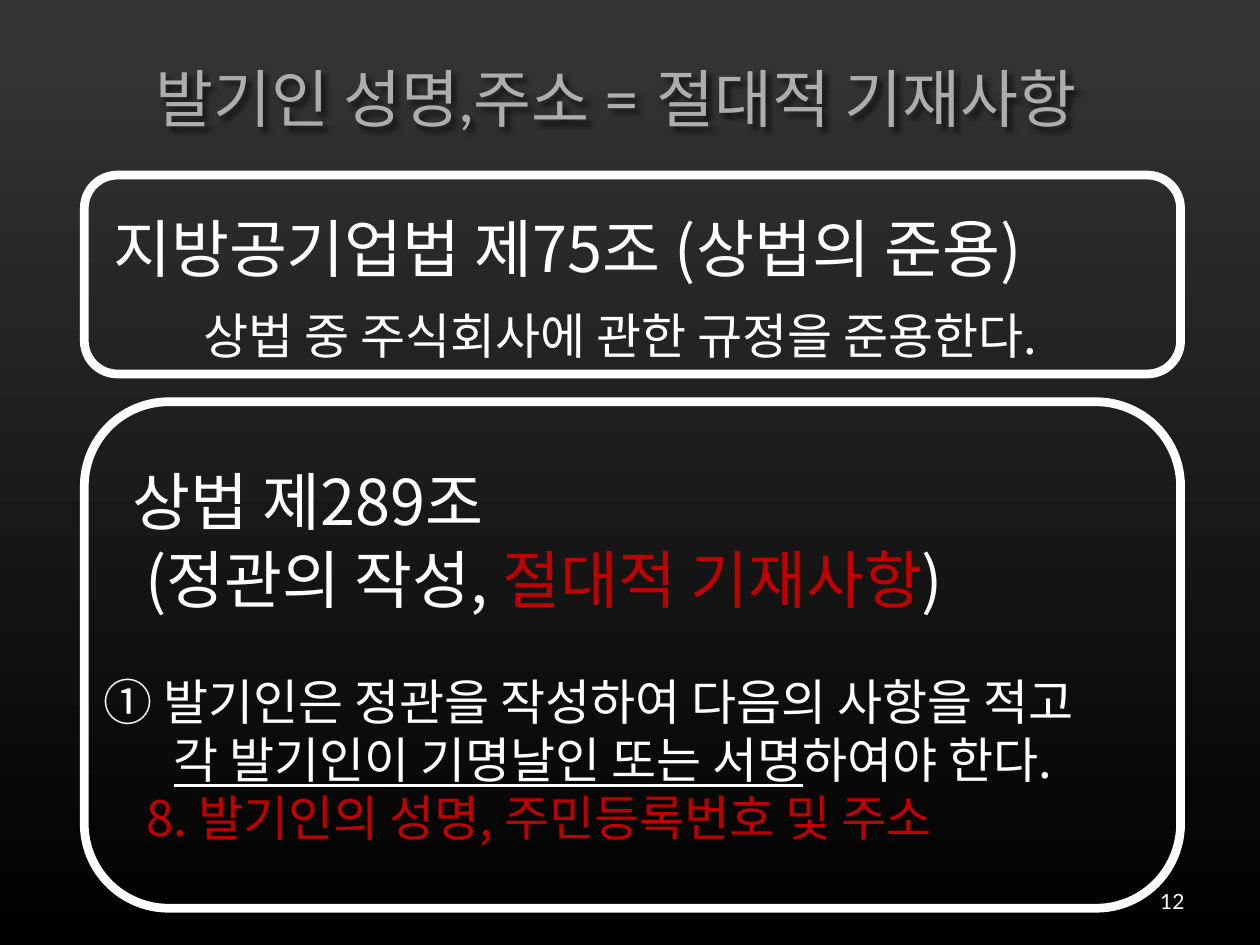
from lxml import etree
from pptx import Presentation
from pptx.dml.color import RGBColor
from pptx.enum import shapes, text
from pptx.oxml import ns
from pptx.util import Cm, Pt

THEME = {
    "top": "333333", "bottom": "000000",
    "title": "ADADAD", "ink": "FFFFFF", "accent": "C00000",
    "latin": "Lato", "korean": "Noto Sans CJK KR",
    "heading": 36, "body": 28, "number": 12, "outline": 5,
}
LEADING = {"heading": 44.6, "body": 33.2}
HANG = 1.42

TITLE = "발기인 성명,주소 = 절대적 기재사항"
PAGE = "12"

# Runs are (text, colour, underlined); left and first are indents in cm, gap in points
PANELS = [
    {"frame": (1.7, 3.53, 22.1, 4.01), "text": (1.9, 4.17, 21.2, 3.2), "paragraphs": [
        {"size": "heading", "left": HANG, "first": -HANG,
         "runs": [("지방공기업법 제75조 (상법의 준용)", "ink", False)]},
        {"size": "body", "gap": 12, "align": text.PP_ALIGN.CENTER,
         "runs": [("상법 중 주식회사에 관한 규정을 준용한다.", "ink", False)]},
    ]},
    {"frame": (1.7, 8.1, 22.1, 10.21), "text": (1.7, 9.27, 21.2, 8.2), "paragraphs": [
        {"size": "heading", "left": 0.6,
         "runs": [("상법 제289조", "ink", False)]},
        {"size": "heading", "left": 0.85,
         "runs": [("(정관의 작성, ", "ink", False),
                  ("절대적 기재사항", "accent", False),
                  (")", "ink", False)]},
        {"size": "body", "gap": 32, "left": HANG, "first": -HANG,
         "runs": [("① 발기인은 정관을 작성하여 다음의 사항을 적고 ", "ink", False),
                  ("각 발기인이 기명날인 또는 서명", "ink", True),
                  ("하여야 한다.", "ink", False)]},
        {"size": "body", "left": 0.88,
         "runs": [("8. 발기인의 성명, 주민등록번호 및 주소", "accent", False)]},
    ]},
]


def color(name):
    return RGBColor.from_string(THEME[name])


def place(sp, box):
    sp.left, sp.top, sp.width, sp.height = map(Cm, box)


def add_run(p, words, size, ink, latin, underline=False):
    r = p.add_run()
    r.text = words
    r.font.size = Pt(THEME[size])
    r.font.color.rgb = color(ink)
    r.font.name = THEME[latin]
    if underline:
        r.font.underline = True
    ea = etree.SubElement(r.font._element, ns.qn("a:ea"))
    ea.set("typeface", THEME["korean"])


def add_text_shadow(sp):
    effects = etree.SubElement(sp._element.spPr, ns.qn("a:effectLst"))
    shadow = etree.SubElement(effects, ns.qn("a:outerShdw"),
                              blurRad="38100", dist="38100", dir="2700000")
    ink = etree.SubElement(shadow, ns.qn("a:srgbClr"), val="000000")
    etree.SubElement(ink, ns.qn("a:alpha"), val="60000")


def add_frame(slide, box):
    sp = slide.shapes.add_shape(shapes.MSO_SHAPE.ROUNDED_RECTANGLE, *map(Cm, box))
    sp.shadow.inherit = False
    sp.fill.background()
    sp.line.color.rgb = color("ink")
    sp.line.width = Pt(THEME["outline"])


def fill_body(sp, paragraphs):
    tf = sp.text_frame
    tf.word_wrap = True
    tf.auto_size = text.MSO_AUTO_SIZE.NONE
    tf.vertical_anchor = text.MSO_ANCHOR.TOP
    tf.margin_left = tf.margin_right = Cm(0.38)
    tf.margin_top = tf.margin_bottom = 0
    for i, item in enumerate(paragraphs):
        p = tf.add_paragraph() if i else tf.paragraphs[0]
        p.alignment = item.get("align", text.PP_ALIGN.LEFT)
        p.line_spacing = Pt(LEADING[item["size"]])
        p.space_before = Pt(item.get("gap", 0))
        p.space_after = Pt(0)
        pPr = p._p.get_or_add_pPr()
        pPr.set("marL", str(Cm(item.get("left", 0))))
        pPr.set("indent", str(Cm(item.get("first", 0))))
        etree.SubElement(pPr, ns.qn("a:buNone"))
        for words, ink, underline in item["runs"]:
            add_run(p, words, item["size"], ink, "korean", underline)


def main():
    prs = Presentation()
    prs.slide_width, prs.slide_height = Cm(25.4), Cm(19.05)
    slide = prs.slides.add_slide(prs.slide_layouts.get_by_name("Two Content"))

    fill = slide.background.fill
    fill.gradient()
    fill.gradient_angle = 270
    for stop, name, position in zip(fill.gradient_stops, ("top", "bottom"), (0.06, 1)):
        stop.color.rgb = color(name)
        stop.position = position

    title, *bodies = slide.placeholders
    place(title, (0.71, 0.76, 23.42, 2.39))
    tf = title.text_frame
    tf.auto_size = text.MSO_AUTO_SIZE.NONE
    tf.vertical_anchor = text.MSO_ANCHOR.MIDDLE
    tf.paragraphs[0].alignment = text.PP_ALIGN.CENTER
    add_run(tf.paragraphs[0], TITLE, "heading", "title", "latin")
    add_text_shadow(title)

    for panel, body in zip(PANELS, bodies):
        add_frame(slide, panel["frame"])
        place(body, panel["text"])
        fill_body(body, panel["paragraphs"])

    number = slide.shapes.add_textbox(*map(Cm, (18.21, 17.65, 5.92, 1.02)))
    tf = number.text_frame
    tf.word_wrap = True
    tf.vertical_anchor = text.MSO_ANCHOR.MIDDLE
    tf.paragraphs[0].alignment = text.PP_ALIGN.RIGHT
    add_run(tf.paragraphs[0], PAGE, "number", "ink", "latin")

    prs.save("out.pptx")


if __name__ == "__main__":
    main()
